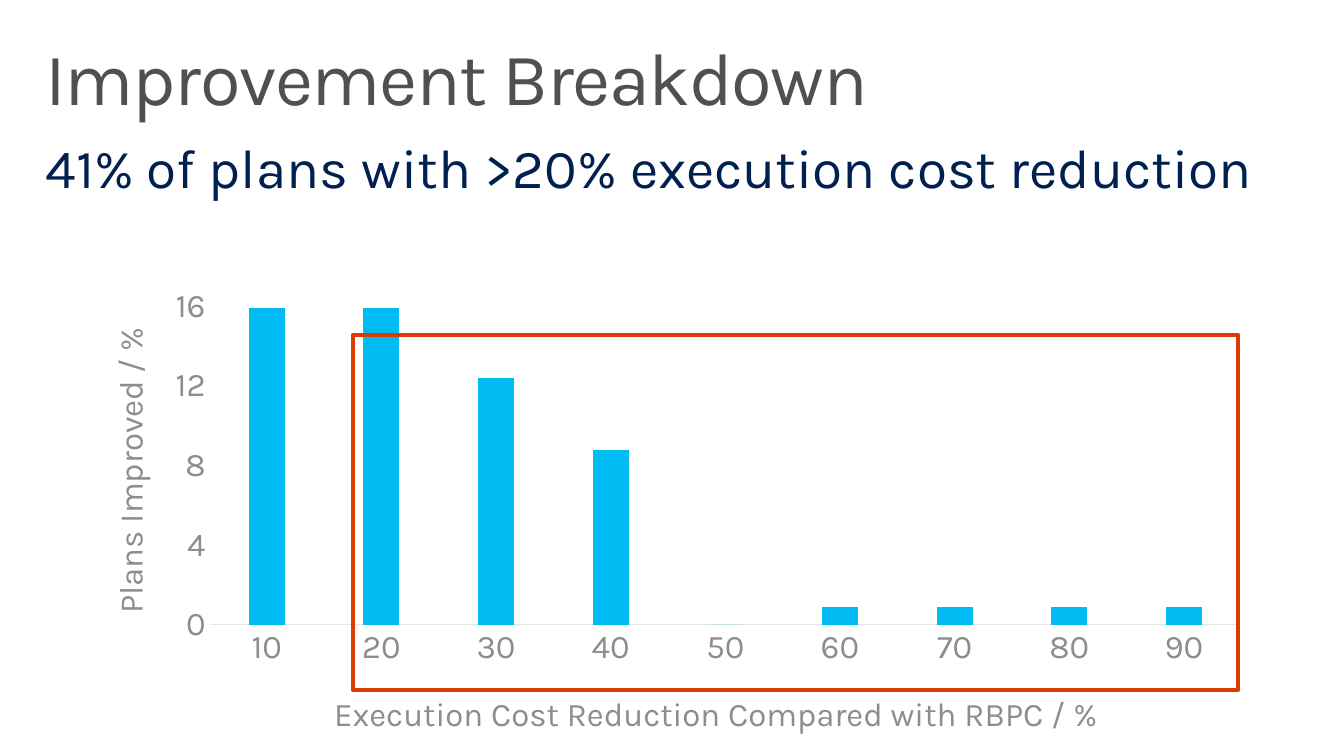
from lxml import etree
from pptx import Presentation
from pptx.chart.data import CategoryChartData
from pptx.dml.color import RGBColor
from pptx.enum.chart import XL_CHART_TYPE, XL_TICK_MARK
from pptx.enum.shapes import MSO_SHAPE
from pptx.enum.text import MSO_ANCHOR, PP_ALIGN
from pptx.oxml.ns import qn
from pptx.util import Inches, Pt

COLUMNS = XL_CHART_TYPE.COLUMN_CLUSTERED
NO_TICK = XL_TICK_MARK.NONE
RECTANGLE = MSO_SHAPE.RECTANGLE
TOP = MSO_ANCHOR.TOP
LEFT = PP_ALIGN.LEFT


def rgb(hex_color):
    return RGBColor.from_string(hex_color)


def place_in_chart(parent, index, **layout_values):
    for automatic in parent.findall(qn("c:layout")):
        parent.remove(automatic)
    layout = etree.Element(qn("c:layout"))
    parent.insert(index, layout)
    manual = etree.SubElement(layout, qn("c:manualLayout"))
    for tag, value in layout_values.items():
        etree.SubElement(manual, qn("c:" + tag)).set("val", str(value))


class SlideBuilder:
    font_name = "Karla"
    heading_color = "505050"
    body_color = "002050"
    axis_color = "8D8D8D"
    baseline_color = "E5E5E5"
    column_color = "00BCF2"
    highlight_color = "DC3C00"
    axis_size = 24

    def __init__(self, presentation):
        self.slide = presentation.slides.add_slide(presentation.slide_layouts[1])
        self.slide.background.fill.solid()
        self.slide.background.fill.fore_color.rgb = rgb("FFFFFF")

    def style_font(self, font, size, color):
        font.name = self.font_name
        font.size = Pt(size)
        font.bold = False
        font.color.rgb = rgb(color)

    def fill_placeholder(self, placeholder, text, box, size, color):
        placeholder.left, placeholder.top, placeholder.width, placeholder.height = map(Inches, box)
        frame = placeholder.text_frame
        frame.text = text
        frame.word_wrap = True
        frame.vertical_anchor = TOP
        frame.margin_left = frame.margin_right = Inches(0.16)
        frame.margin_top = frame.margin_bottom = Inches(0.1)
        paragraph = frame.paragraphs[0]
        paragraph.alignment = LEFT
        paragraph.line_spacing = 0.9
        paragraph.space_before = Pt(0)
        run = paragraph.runs[0]
        self.style_font(run.font, size, color)
        return paragraph

    def title(self, text, box):
        paragraph = self.fill_placeholder(self.slide.shapes.title, text, box, 54, self.heading_color)
        paragraph.runs[0].font._element.set("spc", "-100")

    def body(self, text, box):
        paragraph = self.fill_placeholder(self.slide.placeholders[1], text, box, 40, self.body_color)
        properties = paragraph._p.get_or_add_pPr()
        properties.set("marL", "0")
        properties.set("indent", "0")
        etree.SubElement(properties, qn("a:buNone"))

    def axis(self, axis, title, x, y, rotation):
        axis.has_major_gridlines = False
        axis.major_tick_mark = axis.minor_tick_mark = NO_TICK
        self.style_font(axis.tick_labels.font, self.axis_size, self.axis_color)
        frame = axis.axis_title.text_frame
        frame.text = title
        self.style_font(frame.paragraphs[0].runs[0].font, self.axis_size, self.axis_color)
        frame._txBody.bodyPr.set("rot", str(rotation * 60000))
        frame._txBody.bodyPr.set("vert", "horz")
        place_in_chart(axis.axis_title.element, 1, xMode="edge", yMode="edge", x=x, y=y)

    def column_chart(self, categories, values, box, category_title, value_title):
        data = CategoryChartData()
        data.categories = categories
        data.add_series("Series 1", values)
        chart = self.slide.shapes.add_chart(COLUMNS, *map(Inches, box), data).chart
        chart.has_legend = False
        chart.has_title = False
        self.style_font(chart.font, self.axis_size, self.heading_color)

        plot = chart.plots[0]
        plot.gap_width = 219
        plot.overlap = -27
        plot.vary_by_categories = False
        columns = plot.series[0].format.fill
        columns.solid()
        columns.fore_color.rgb = rgb(self.column_color)

        self.axis(chart.category_axis, category_title, 0.21, 0.87, 0)
        baseline = chart.category_axis.format.line
        baseline.color.rgb = rgb(self.baseline_color)
        baseline.width = Pt(0.75)

        self.axis(chart.value_axis, value_title, 0.02, 0.13, -90)
        chart.value_axis.minimum_scale = 0
        chart.value_axis.maximum_scale = 16
        chart.value_axis.major_unit = 4
        chart.value_axis.format.line.fill.background()

        plot_area = chart.element.find(".//" + qn("c:plotArea"))
        place_in_chart(plot_area, 0, layoutTarget="inner", xMode="edge", yMode="edge",
                       x=0.11, y=0.1, w=0.87, h=0.645)

    def highlight(self, box):
        frame = self.slide.shapes.add_shape(RECTANGLE, *map(Inches, box))
        frame.shadow.inherit = False
        frame.fill.background()
        frame.line.color.rgb = rgb(self.highlight_color)
        frame.line.width = Pt(3)


def main():
    presentation = Presentation()
    presentation.slide_width = Inches(13.6)
    presentation.slide_height = Inches(7.65)

    builder = SlideBuilder(presentation)
    builder.title("Improvement Breakdown", (0.3, 0.32, 13, 1))
    builder.body("41% of plans with >20% execution cost reduction", (0.3, 1.33, 13, 0.81))
    builder.column_chart(
        [str(reduction) for reduction in range(10, 100, 10)],
        [15.9, 15.9, 12.4, 8.8, 0, 0.9, 0.9, 0.9, 0.9],
        (0.8, 2.6, 12, 5),
        "Execution Cost Reduction Compared with RBPC / %",
        "Plans Improved / %",
    )
    builder.highlight((3.57, 3.39, 8.96, 3.59))
    presentation.save("out.pptx")


if __name__ == "__main__":
    main()
